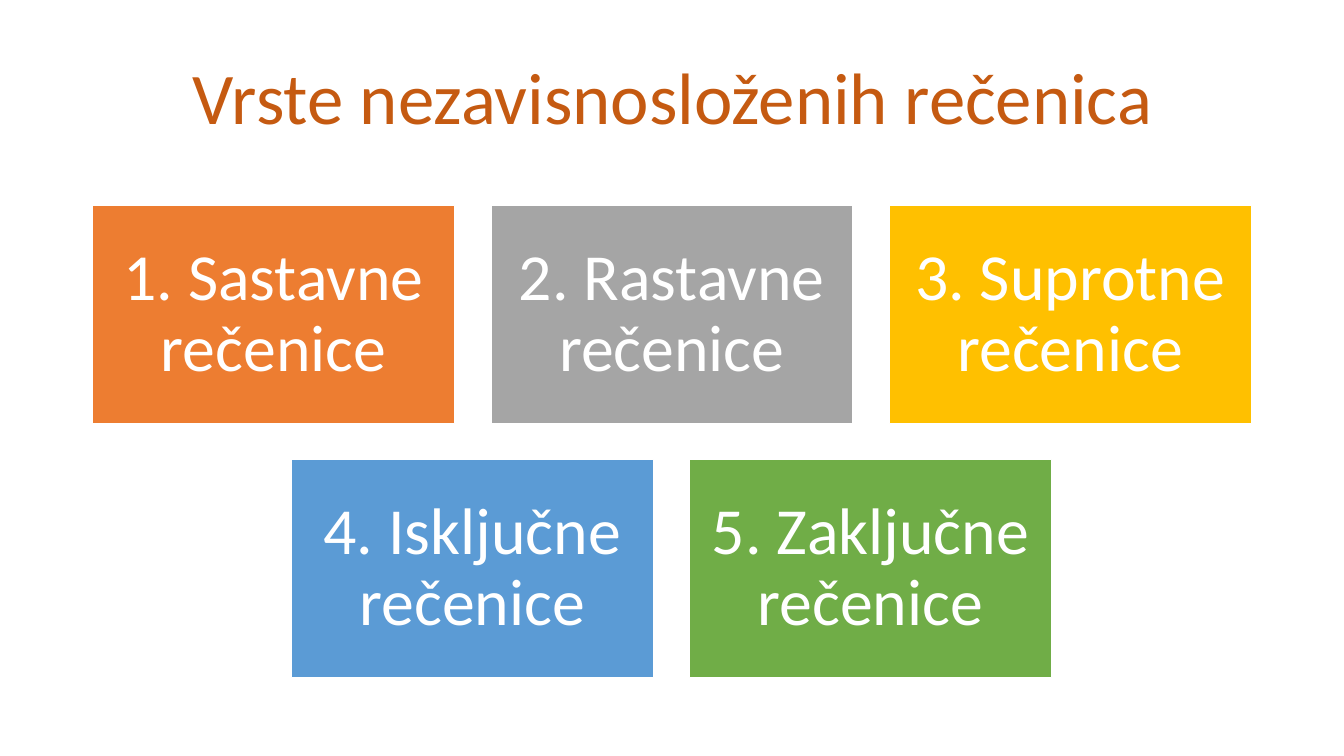
"""Build a slide that lists the five kinds of independent compound sentences."""
from typing import NamedTuple

from pptx import Presentation
from pptx import util as u
from pptx.dml.color import RGBColor
from pptx.enum import shapes, text

EMU_PER_PX = 9144
SLIDE_WIDTH, SLIDE_HEIGHT = 1333, 750
CARD_WIDTH, CARD_HEIGHT, GAP = 359, 216, 36
CARDS_TOP = 204
CARD_INSET = 20
FONT = "Calibri"
COLORS = {
    "title": "C55A11",
    "white": "FFFFFF",
    "orange": "ED7D31",
    "gray": "A5A5A5",
    "gold": "FFC000",
    "blue": "5B9BD5",
    "green": "70AD47",
}


class Card(NamedTuple):
    label: str
    color: str


ROWS = [
    [
        Card("1. Sastavne rečenice", "orange"),
        Card("2. Rastavne rečenice", "gray"),
        Card("3. Suprotne rečenice", "gold"),
    ],
    [
        Card("4. Isključne rečenice", "blue"),
        Card("5. Zaključne rečenice", "green"),
    ],
]


def px(length: int) -> u.Emu:
    return u.Emu(length * EMU_PER_PX)


def rgb(name: str) -> RGBColor:
    return RGBColor.from_string(COLORS[name])


def write(shape, words: str, *, size: int, color: str) -> None:
    frame = shape.text_frame
    frame.word_wrap = True
    frame.auto_size = text.MSO_AUTO_SIZE.NONE
    frame.vertical_anchor = text.MSO_ANCHOR.MIDDLE
    para = frame.paragraphs[0]
    para.alignment = text.PP_ALIGN.CENTER
    para.line_spacing = 0.9
    span = para.add_run()
    span.text = words
    span.font.name = FONT
    span.font.size = u.Pt(size)
    span.font.color.rgb = rgb(color)


def add_title(slide, words: str) -> None:
    title = slide.shapes.title
    title.left, title.top = px(92), px(38)
    title.width, title.height = px(1150), px(124)
    write(title, words, size=52, color="title")


def add_card(slide, card: Card, left: int, top: int) -> None:
    box = slide.shapes.add_shape(
        shapes.MSO_SHAPE.RECTANGLE,
        px(left), px(top), px(CARD_WIDTH), px(CARD_HEIGHT),
    )
    box.shadow.inherit = False
    box.fill.solid()
    box.fill.fore_color.rgb = rgb(card.color)
    box.line.color.rgb = rgb("white")
    box.line.width = u.Pt(1)
    frame = box.text_frame
    frame.margin_left = frame.margin_right = px(CARD_INSET)
    frame.margin_top = frame.margin_bottom = px(CARD_INSET)
    write(box, card.label, size=47, color="white")


def add_row(slide, cards: list[Card], top: int) -> None:
    pitch = CARD_WIDTH + GAP
    left = (SLIDE_WIDTH - len(cards) * pitch + GAP) // 2
    for column, card in enumerate(cards):
        add_card(slide, card, left + column * pitch, top)


def main() -> None:
    deck = Presentation()
    deck.slide_width, deck.slide_height = px(SLIDE_WIDTH), px(SLIDE_HEIGHT)
    slide = deck.slides.add_slide(deck.slide_layouts.get_by_name("Title Only"))
    add_title(slide, "Vrste nezavisnosloženih rečenica")
    for index, cards in enumerate(ROWS):
        add_row(slide, cards, CARDS_TOP + index * (CARD_HEIGHT + GAP))
    deck.save("out.pptx")


if __name__ == "__main__":
    main()
